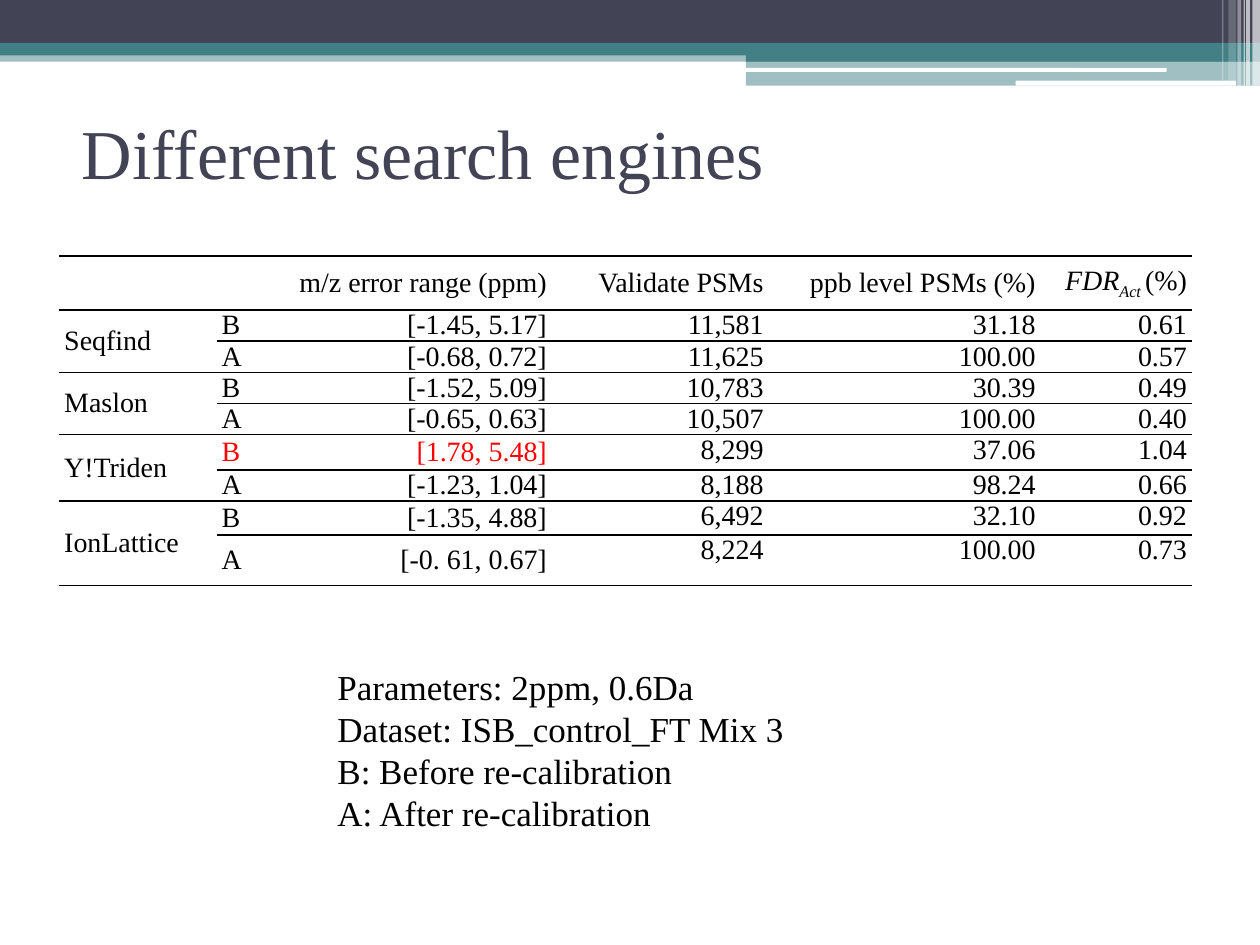
"""Build the slide that compares search engines before and after re-calibration."""
from lxml import etree
from pptx import Presentation
from pptx.dml.color import RGBColor
from pptx.enum.shapes import MSO_SHAPE
from pptx.enum.text import MSO_ANCHOR, MSO_AUTO_SIZE, PP_ALIGN
from pptx.oxml import parse_xml
from pptx.oxml.ns import nsdecls, qn
from pptx.util import Inches, Pt

RECTANGLE, ROUNDED = MSO_SHAPE.RECTANGLE, MSO_SHAPE.ROUNDED_RECTANGLE
TOP, MIDDLE = MSO_ANCHOR.TOP, MSO_ANCHOR.MIDDLE
LEFT, RIGHT, JUSTIFY = PP_ALIGN.LEFT, PP_ALIGN.RIGHT, PP_ALIGN.JUSTIFY
FIT_SHAPE = MSO_AUTO_SIZE.SHAPE_TO_FIT_TEXT
SLATE = RGBColor(0x42, 0x44, 0x56)
TEAL = RGBColor(0x43, 0x80, 0x86)
WHITE = RGBColor(0xFF, 0xFF, 0xFF)
BLACK = RGBColor(0x00, 0x00, 0x00)
RED = RGBColor(0xFF, 0x00, 0x00)
FONT = "Times New Roman"


def add_run(paragraph, text, size, color=BLACK):
    run = paragraph.add_run()
    run.text = text
    run.font.name = FONT
    run.font.size = Pt(size)
    run.font.color.rgb = color
    return run


def add_band(kind, left, top, width, height, color, opacity=100):
    band = slide.shapes.add_shape(kind, Inches(left), Inches(top), Inches(width), Inches(height))
    band.shadow.inherit = False
    band.fill.solid()
    band.fill.fore_color.rgb = color
    band.line.fill.background()
    if opacity < 100:
        fill_color = band._element.spPr.find(f"{qn('a:solidFill')}/{qn('a:srgbClr')}")
        etree.SubElement(fill_color, qn("a:alpha"), val=str(opacity * 1000))


presentation = Presentation()
presentation.slide_width = Inches(10)
presentation.slide_height = Inches(7.5)
slide = presentation.slides.add_slide(presentation.slide_layouts[5])

add_band(RECTANGLE, 0, 0.4, 10, 0.09, TEAL, 50)
add_band(RECTANGLE, 0, 0, 10, 0.34, SLATE)
add_band(RECTANGLE, 0, 0.34, 10, 0.1, TEAL)
add_band(RECTANGLE, 5.92, 0.39, 4.08, 0.1, TEAL)
add_band(RECTANGLE, 5.92, 0.48, 4.08, 0.2, TEAL, 50)
add_band(ROUNDED, 5.91, 0.54, 3.35, 0.03, WHITE)
add_band(ROUNDED, 8.06, 0.64, 1.75, 0.04, WHITE)
stripes = [
    (9.94, 0.06, 0.68, 65),
    (9.89, 0.03, 0.68, 65),
    (9.87, 0.01, 0.68, 60),
    (9.82, 0.03, 0.68, 40),
    (9.75, 0.06, 0.64, 20),
    (9.7, 0.01, 0.64, 30),
]
for left, width, height, opacity in stripes:
    add_band(RECTANGLE, left, 0, width, height, WHITE, opacity)

title = slide.shapes.title
title.left, title.top = Inches(0.55), Inches(0.62)
title.width, title.height = Inches(9), Inches(1.17)
title.text_frame.vertical_anchor = MIDDLE
title_paragraph = title.text_frame.paragraphs[0]
title_paragraph.alignment = LEFT
add_run(title_paragraph, "Different search engines", 40, SLATE)

column_widths = [1.25, 0.47, 2.19, 1.72, 2.16, 1.2]
row_heights = [0.43, 0.21, 0.21, 0.14, 0.14, 0.28, 0.21, 0.27, 0.4]
rows = [
    ["", "", "m/z error range (ppm)", "Validate PSMs", "ppb level PSMs (%)", ""],
    ["Seqfind", "B", "[-1.45, 5.17]", "11,581", "31.18", "0.61"],
    ["", "A", "[-0.68, 0.72]", "11,625", "100.00", "0.57"],
    ["Maslon", "B", "[-1.52, 5.09]", "10,783", "30.39", "0.49"],
    ["", "A", "[-0.65, 0.63]", "10,507", "100.00", "0.40"],
    ["Y!Triden", "B", "[1.78, 5.48]", "8,299", "37.06", "1.04"],
    ["", "A", "[-1.23, 1.04]", "8,188", "98.24", "0.66"],
    ["IonLattice", "B", "[-1.35, 4.88]", "6,492", "32.10", "0.92"],
    ["", "A", "[-0. 61, 0.67]", "8,224", "100.00", "0.73"],
]
red_cells = {(5, 1), (5, 2)}
table = slide.shapes.add_table(
    len(rows), len(column_widths), Inches(0.47), Inches(2.03),
    Inches(sum(column_widths)), Inches(sum(row_heights)),
).table
table.first_row = False
table.horz_banding = False
for column, width in zip(table.columns, column_widths):
    column.width = Inches(width)
for row, height in zip(table.rows, row_heights):
    row.height = Inches(height)

line_fill = '<a:solidFill><a:srgbClr val="000000"/></a:solidFill>'
borders = {"lnL": "<a:noFill/>", "lnR": "<a:noFill/>", "lnT": line_fill, "lnB": line_fill}
for row_index, row in enumerate(rows):
    for column_index, text in enumerate(row):
        cell = table.cell(row_index, column_index)
        cell.margin_left = cell.margin_right = Inches(0.04)
        cell.margin_top = cell.margin_bottom = 0
        cell.vertical_anchor = TOP if row_index > 0 and column_index > 2 else MIDDLE
        cell.fill.background()
        properties = cell._tc.get_or_add_tcPr()
        for position, (side, fill) in enumerate(borders.items()):
            border = parse_xml(f'<a:{side} {nsdecls("a")} w="12700">{fill}</a:{side}>')
            properties.insert(position, border)
        paragraph = cell.text_frame.paragraphs[0]
        paragraph.alignment = JUSTIFY if column_index < 2 else RIGHT
        if text:
            color = RED if (row_index, column_index) in red_cells else BLACK
            add_run(paragraph, text, 16, color)

rate_paragraph = table.cell(0, 5).text_frame.paragraphs[0]
add_run(rate_paragraph, "FDR", 16).font.italic = True
subscript = add_run(rate_paragraph, "Act ", 16)
subscript.font.italic = True
subscript._r.get_or_add_rPr().set("baseline", "-25000")
add_run(rate_paragraph, "(%)", 16)

for row_index in range(1, len(rows), 2):
    table.cell(row_index, 0).merge(table.cell(row_index + 1, 0))

notes_box = slide.shapes.add_textbox(Inches(2.58), Inches(5.23), Inches(3.77), Inches(1.45))
text_frame = notes_box.text_frame
text_frame.word_wrap = False
text_frame.auto_size = FIT_SHAPE
notes = [
    "Parameters: 2ppm, 0.6Da",
    "Dataset: ISB_control_FT Mix 3",
    "B: Before re-calibration",
    "A: After re-calibration",
]
for index, note in enumerate(notes):
    paragraph = text_frame.add_paragraph() if index else text_frame.paragraphs[0]
    add_run(paragraph, note, 20)

presentation.save("out.pptx")
